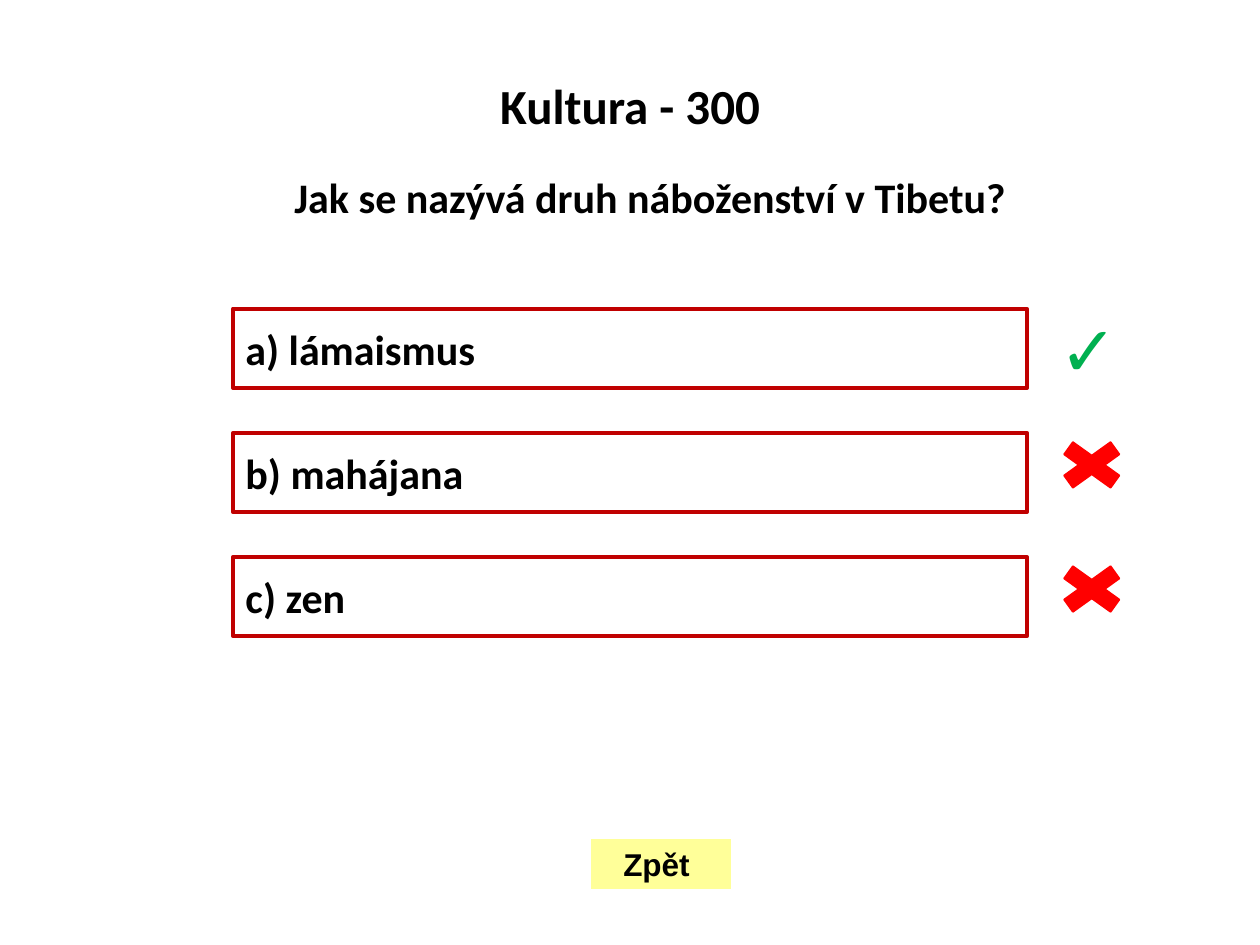
from dataclasses import dataclass

from pptx import Presentation
from pptx.dml.color import RGBColor
from pptx.enum.shapes import MSO_SHAPE
from pptx.enum.text import MSO_ANCHOR, PP_ALIGN
from pptx.util import Inches, Pt


@dataclass(frozen=True)
class Theme:
    """Colours, fonts and type sizes of the quiz slide."""
    text: RGBColor = RGBColor(0x00, 0x00, 0x00)
    border: RGBColor = RGBColor(0xC0, 0x00, 0x00)
    right: RGBColor = RGBColor(0x00, 0xB0, 0x50)
    wrong: RGBColor = RGBColor(0xFF, 0x00, 0x00)
    button: RGBColor = RGBColor(0xFF, 0xFF, 0x99)
    body_font: str = "Calibri"
    button_font: str = "Arial"
    title_size: int = 28
    body_size: int = 24
    button_size: int = 18
    check_size: int = 40


THEME = Theme()
ANSWERS = [("a) lámaismus", True), ("b) mahájana", False), ("c) zen", False)]


def write(shape, text, size, font=THEME.body_font, color=THEME.text,
          alignment=PP_ALIGN.CENTER, wrap=True):
    """Put one bold run into a shape and return its paragraph."""
    shape.text_frame.word_wrap = wrap
    paragraph = shape.text_frame.paragraphs[0]
    paragraph.alignment = alignment
    run = paragraph.add_run()
    run.text = text
    run.font.name = font
    run.font.size = Pt(size)
    run.font.bold = True
    run.font.color.rgb = color
    return paragraph


def add_plain_shape(slide, kind, box, fill=None, line=None, line_width=1):
    """Add a preset shape without shadow, with optional fill and line."""
    shape = slide.shapes.add_shape(kind, *box)
    shape.shadow.inherit = False
    if fill is None:
        shape.fill.background()
    else:
        shape.fill.solid()
        shape.fill.fore_color.rgb = fill
    if line is None:
        shape.line.fill.background()
    else:
        shape.line.color.rgb = line
        shape.line.width = Pt(line_width)
    return shape


def add_heading(slide, box):
    """Add the category title and the question below it."""
    left, top, width, height = box
    title = slide.shapes.add_textbox(left, top, width, height)
    paragraph = write(title, "Kultura - 300", THEME.title_size)
    paragraph.line_spacing = 0.9
    paragraph.space_before = Pt(10)
    question = slide.shapes.add_textbox(
        left + Inches(2.01), top + Inches(0.71), Inches(6.3), Inches(0.5))
    write(question, "Jak se nazývá druh náboženství v Tibetu?", THEME.body_size)


def add_button(slide, box, text, size, font, alignment, **style):
    """Add a blank action button with a vertically centred label."""
    button = add_plain_shape(slide, MSO_SHAPE.ACTION_BUTTON_CUSTOM, box, **style)
    button.text_frame.vertical_anchor = MSO_ANCHOR.MIDDLE
    write(button, text, size, font, alignment=alignment, wrap=False)


def add_mark(slide, left, top, correct):
    """Add a check mark or a cross beside an answer."""
    if correct:
        check = slide.shapes.add_textbox(
            left, top - Inches(0.07), Inches(0.63), Inches(0.77))
        write(check, "✓", THEME.check_size, THEME.button_font, THEME.right,
              PP_ALIGN.LEFT)
    else:
        add_plain_shape(slide, MSO_SHAPE.MATH_MULTIPLY,
                        (left, top, Inches(0.71), Inches(0.51)),
                        fill=THEME.wrong, line=THEME.wrong)


def add_answers(slide, box):
    """Spread the answer buttons evenly over the box, each with its mark."""
    left, top, width, height = box
    row_height = Inches(0.63)
    pitch = (height - row_height) // (len(ANSWERS) - 1)
    for index, (text, correct) in enumerate(ANSWERS):
        row_top = top + index * pitch
        add_button(slide, (left, row_top, width, row_height), text,
                   THEME.body_size, THEME.body_font, PP_ALIGN.LEFT,
                   line=THEME.border, line_width=2.25)
        add_mark(slide, left + width + Inches(0.16), row_top, correct)


def add_back_button(slide, box):
    """Add the yellow button that leads back."""
    add_button(slide, box, "Zpět ", THEME.button_size, THEME.button_font,
               PP_ALIGN.CENTER, fill=THEME.button)


def main():
    """Build the quiz slide and save it."""
    presentation = Presentation()
    presentation.slide_width = Inches(10)
    presentation.slide_height = Inches(7.5)
    slide = presentation.slides.add_slide(presentation.slide_layouts[6])
    add_heading(slide, (0, Inches(0.6), Inches(10), Inches(0.79)))
    add_answers(slide, (Inches(1.85), Inches(2.45), Inches(6.3), Inches(2.6)))
    add_back_button(slide, (Inches(4.69), Inches(6.66), Inches(1.11), Inches(0.4)))
    presentation.save("out.pptx")


if __name__ == "__main__":
    main()
